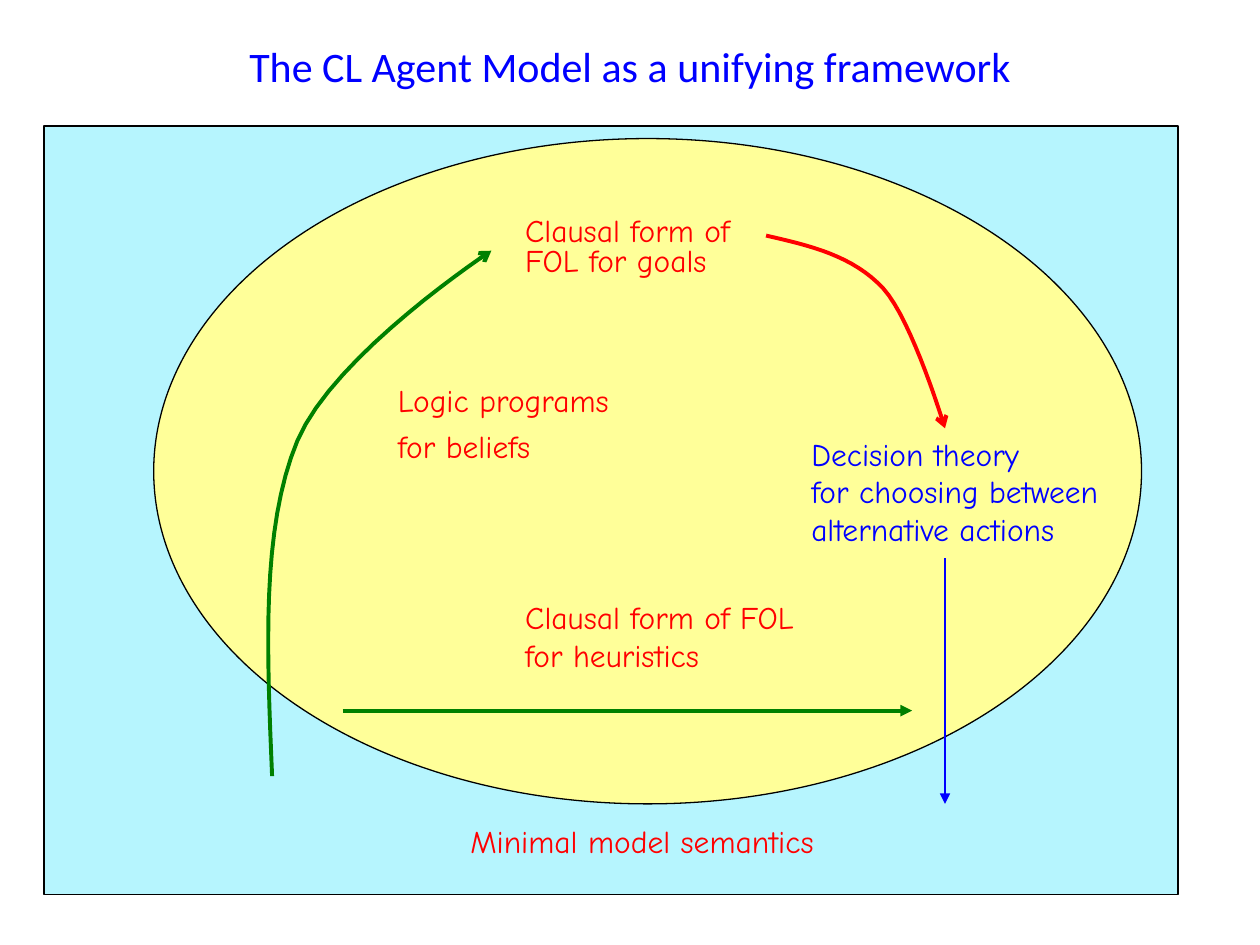
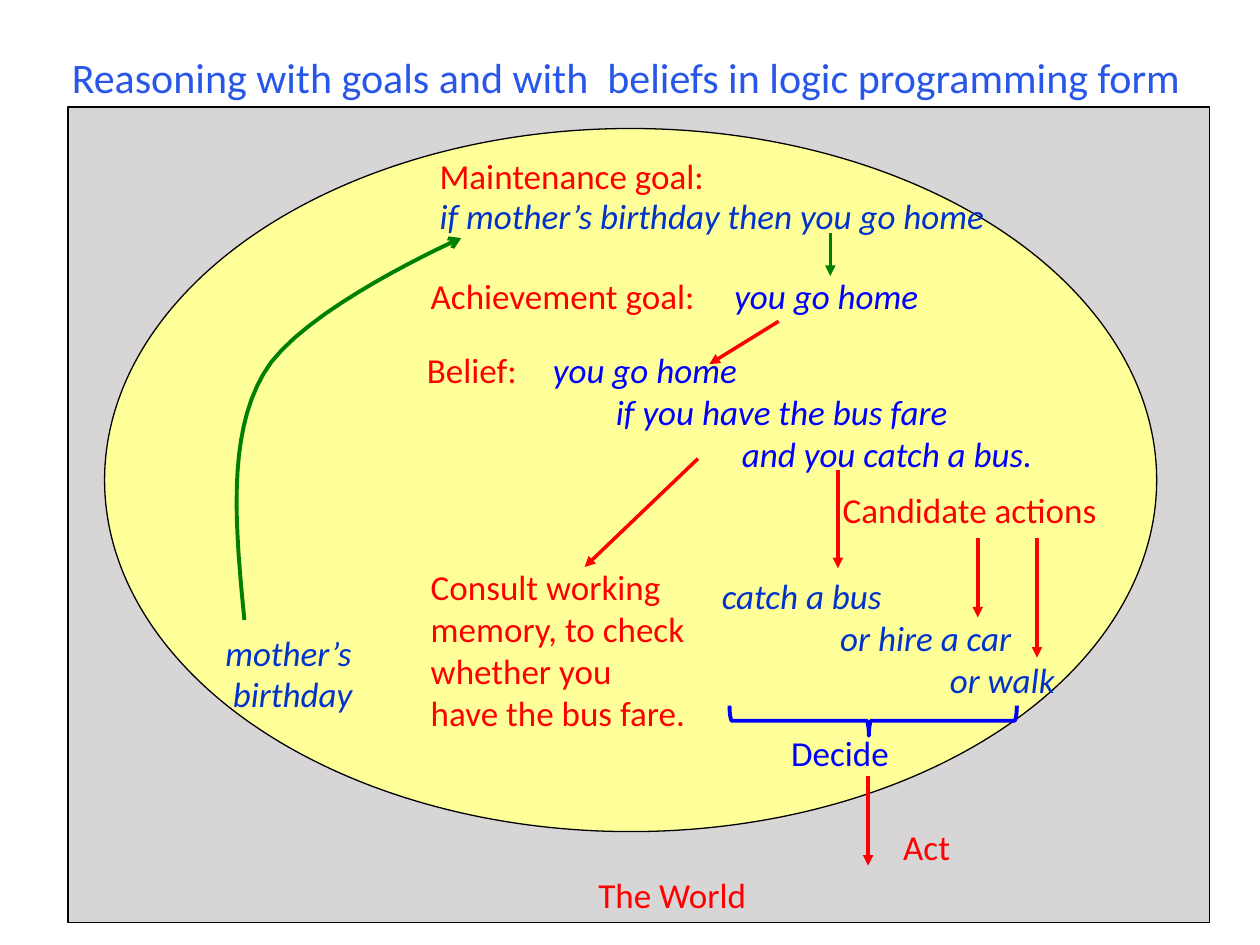
from dataclasses import dataclass

from lxml.etree import SubElement
from pptx import Presentation
from pptx.dml.color import RGBColor
from pptx.enum.shapes import MSO_CONNECTOR as Connector, MSO_SHAPE as Preset
from pptx.enum.text import MSO_ANCHOR as Anchor, PP_ALIGN as Align
from pptx.oxml.ns import qn
from pptx.util import Inches, Pt

RED, BLUE, GREEN = "FF0000", "0000FF", "008000"
ROYAL, TITLE_BLUE = "0033CC", "2856E8"
YELLOW, BLACK = "FFFF99", "000000"
HAND, SANS = "Comic Neue", "Calibri"
CURVE_STEPS = 16

Box = tuple[float, float, float, float]
Point = tuple[float, float]


@dataclass(frozen=True)
class Span:
    """A stretch of text in one colour."""
    text: str
    colour: str = RED
    italic: bool = False


@dataclass(frozen=True)
class Row:
    """A paragraph with its indent and tab stop in inches."""
    spans: tuple[Span, ...]
    indent: float = 0
    tab: float = 0


@dataclass(frozen=True)
class Label:
    """A block of rows, with tight line spacing where a gap is given."""
    at: Box
    rows: tuple[Row, ...]
    gap: float | None = None
    align: Align = Align.LEFT


@dataclass(frozen=True)
class Arrow:
    """A straight arrow."""
    start: Point
    end: Point
    colour: str = RED
    width: float = 2


@dataclass(frozen=True)
class Curve:
    """A curved arrow made of cubic Bezier pieces."""
    start: Point
    pieces: tuple[tuple[Point, Point, Point], ...]
    colour: str


@dataclass(frozen=True)
class Scene:
    """Everything that one slide shows."""
    title: str
    title_at: Box
    title_colour: str
    title_align: Align
    world: Box
    world_colour: str
    mind: Box
    font: str
    size: float
    labels: tuple[Label, ...]
    arrows: tuple[Arrow, ...]
    curves: tuple[Curve, ...]


def rgb(colour: str) -> RGBColor:
    """Turn a hex string into a colour."""
    return RGBColor.from_string(colour)


def inches(values) -> list:
    """Convert numbers to lengths."""
    return [Inches(value) for value in values]


def row(text: str, colour: str = RED, italic: bool = False, indent: float = 0) -> Row:
    """Make a row of a single span."""
    return Row((Span(text, colour, italic),), indent)


def style_line(shape, colour: str, width: float, head: str = "") -> None:
    """Set the outline and an optional arrowhead, and drop the shadow."""
    shape.line.color.rgb = rgb(colour)
    shape.line.width = Pt(width)
    properties = shape._element.spPr
    if head:
        SubElement(properties.find(qn("a:ln")), qn("a:tailEnd"), type=head)
    SubElement(properties, qn("a:effectLst"))


def add_region(slide, preset: Preset, at: Box, colour: str, opacity: int = 100) -> None:
    """Draw a filled, thinly outlined region."""
    region = slide.shapes.add_shape(preset, *inches(at))
    region.fill.solid()
    region.fill.fore_color.rgb = rgb(colour)
    if opacity < 100:
        tint = region._element.spPr.find(".//" + qn("a:srgbClr"))
        SubElement(tint, qn("a:alpha"), val=str(opacity * 1000))
    style_line(region, BLACK, 0.75)


def format_run(run, font: str, size: float, colour: str, italic: bool = False) -> None:
    """Set the font of a run."""
    run.font.name, run.font.size = font, Pt(size)
    run.font.color.rgb, run.font.italic = rgb(colour), italic


def add_title(slide, scene: Scene) -> None:
    """Place and format the title placeholder."""
    title = slide.shapes.title
    title.left, title.top, title.width, title.height = inches(scene.title_at)
    frame = title.text_frame
    frame.text = scene.title
    frame.vertical_anchor = Anchor.MIDDLE
    frame.paragraphs[0].alignment = scene.title_align
    format_run(frame.paragraphs[0].runs[0], SANS, 24, scene.title_colour)


def add_label(slide, label: Label, font: str, size: float) -> None:
    """Write the rows of a label."""
    frame = slide.shapes.add_textbox(*inches(label.at)).text_frame
    frame.word_wrap = True
    for number, line in enumerate(label.rows):
        paragraph = frame.add_paragraph() if number else frame.paragraphs[0]
        paragraph.alignment = label.align
        if label.gap is not None:
            paragraph.line_spacing = 0.8
            paragraph.space_before = Pt(label.gap * size)
        properties = paragraph._p.get_or_add_pPr()
        if line.indent:
            properties.set("marL", str(Inches(line.indent)))
            properties.set("indent", "0")
        if line.tab:
            stops = SubElement(properties, qn("a:tabLst"))
            SubElement(stops, qn("a:tab"), pos=str(Inches(line.tab)), algn="l")
        for span in line.spans:
            run = paragraph.add_run()
            run.text = span.text
            format_run(run, font, size, span.colour, span.italic)


def add_arrow(slide, arrow: Arrow) -> None:
    """Draw a straight arrow."""
    connector = slide.shapes.add_connector(
        Connector.STRAIGHT, *inches(arrow.start + arrow.end))
    style_line(connector, arrow.colour, arrow.width, "triangle")


def bezier(ends: tuple[Point, Point, Point, Point], t: float) -> Point:
    """Find the point at t on a cubic curve."""
    weights = ((1 - t) ** 3, 3 * t * (1 - t) ** 2, 3 * t ** 2 * (1 - t), t ** 3)
    x, y = (sum(w * p[axis] for w, p in zip(weights, ends)) for axis in (0, 1))
    return x, y


def add_curve(slide, curve: Curve) -> None:
    """Draw a curved arrow."""
    points, start = [], curve.start
    for piece in curve.pieces:
        points += [bezier((start, *piece), step / CURVE_STEPS)
                   for step in range(1, CURVE_STEPS + 1)]
        start = piece[-1]
    builder = slide.shapes.build_freeform(*inches(curve.start))
    builder.add_line_segments([inches(point) for point in points], close=False)
    outline = builder.convert_to_shape()
    outline.fill.background()
    style_line(outline, curve.colour, 2.25, "arrow")


def add_brace(slide, at: Box) -> None:
    """Draw the brace that gathers the candidate actions."""
    brace = slide.shapes.add_shape(Preset.LEFT_BRACE, *inches(at))
    brace.rotation = 270
    brace.adjustments[0], brace.adjustments[1] = 0.083, 0.485
    brace.fill.background()
    style_line(brace, BLUE, 2.25)


def add_scene(deck, scene: Scene):
    """Build one slide."""
    slide = deck.slides.add_slide(deck.slide_layouts[5])
    add_title(slide, scene)
    add_region(slide, Preset.RECTANGLE, scene.world, scene.world_colour, 44)
    add_region(slide, Preset.OVAL, scene.mind, YELLOW)
    for label in scene.labels:
        add_label(slide, label, scene.font, scene.size)
    for arrow in scene.arrows:
        add_arrow(slide, arrow)
    for curve in scene.curves:
        add_curve(slide, curve)
    return slide


FRAMEWORK = Scene(
    title="The CL Agent Model as a unifying framework",
    title_at=(0.5, 0, 9, 1.04), title_colour=BLUE, title_align=Align.CENTER,
    world=(0.35, 1, 9, 6.1), world_colour="59E9FD", mind=(1.22, 1.1, 7.84, 5.28),
    font=HAND, size=18,
    labels=(
        Label((6.34, 3.4, 2.72, 1.01), (
            row("Decision theory", BLUE),
            row("for choosing between", BLUE),
            row("alternative actions", BLUE))),
        Label((4.07, 1.68, 2.27, 0.59), (row("Clausal form of FOL for goals"),), 0.5),
        Label((3.45, 6.53, 3.29, 0.35), (row("Minimal model semantics"),), 0.2,
              Align.CENTER),
        Label((4.07, 4.7, 2.58, 0.71), (row("Clausal form of FOL for heuristics"),)),
        Label((3.06, 3.03, 2.02, 0.74),
              (row("Logic programs"), row("for beliefs")), 0.5),
    ),
    arrows=(
        Arrow((7.5, 4.43), (7.5, 6.38), BLUE, 1.5),
        Arrow((2.72, 5.64), (7.24, 5.64), GREEN, 2.25),
    ),
    curves=(
        Curve((6.08, 1.87), (
            ((6.43, 1.95), (6.77, 2.03), (7.01, 2.29)),
            ((7.24, 2.54), (7.5, 3.4), (7.5, 3.4))), RED),
        Curve((2.16, 6.16), (
            ((2.12, 5.18), (2.07, 4.2), (2.36, 3.5)),
            ((2.65, 2.81), (3.9, 1.99), (3.9, 1.99))), GREEN),
    ),
)

REASONING = Scene(
    title="Reasoning with goals and with  beliefs in logic programming form",
    title_at=(0.47, 0.36, 9.72, 0.5), title_colour=TITLE_BLUE, title_align=Align.LEFT,
    world=(0.54, 0.85, 9.06, 6.47), world_colour="A6A1A1", mind=(0.83, 1.02, 8.35, 5.58),
    font=SANS, size=20,
    labels=(
        Label((3.29, 2.72, 6.6, 1.11), (
            Row((Span("Belief:\t"), Span("you go home", BLUE, True)), tab=1),
            row("if you have the bus fare", BLUE, True, 1.5),
            row("and you catch a bus.", BLUE, True, 2.5))),
        Label((3.32, 2.19, 4.57, 0.38), (
            Row((Span("Achievement goal:\t"), Span("you go home", BLUE, True)),
                tab=2.41),), 0.2),
        Label((7.07, 6.57, 2.67, 0.38), (row("Act"),), 0.2),
        Label((4.44, 6.95, 1.79, 0.38), (row("The World"),), 0.2, Align.CENTER),
        Label((3.32, 4.44, 2.22, 1.78), (
            row("Consult working memory, to check whether you have the bus fare."),)),
        Label((5.63, 4.51, 4.05, 1.75), (
            row("catch a bus", ROYAL, True),
            row("or hire a car", ROYAL, True, 0.94),
            row("or walk", ROYAL, True, 1.81))),
        Label((6.18, 5.76, 2.48, 0.44), (row("Decide", BLUE),)),
        Label((6.59, 3.83, 2.34, 0.44), (row("Candidate actions"),)),
        Label((1.69, 5.03, 1.44, 0.71), (
            row("mother’s", ROYAL, True),
            row("birthday", ROYAL, True, 0.06)), 0.2),
        Label((3.39, 1.24, 4.8, 0.71), (
            row("Maintenance goal:"),
            row("if mother’s birthday then you go home", ROYAL, True)), 0.2),
    ),
    arrows=(
        Arrow((5.54, 3.64), (4.64, 4.5)),
        Arrow((6.18, 2.55), (5.63, 2.89)),
        Arrow((6.89, 6.16), (6.89, 6.87)),
        Arrow((7.76, 4.27), (7.76, 4.9)),
        Arrow((6.65, 3.73), (6.65, 4.51)),
        Arrow((8.23, 4.27), (8.23, 5.22)),
        Arrow((6.59, 1.85), (6.59, 2.19), GREEN),
    ),
    curves=(
        Curve((1.94, 4.92), (
            ((1.87, 4.2), (1.8, 3.47), (2.09, 2.97)),
            ((2.37, 2.46), (3.66, 1.89), (3.66, 1.89))), GREEN),
    ),
)


def main() -> None:
    """Build and save the deck."""
    deck = Presentation()
    deck.slide_width, deck.slide_height = Inches(10), Inches(7.5)
    add_scene(deck, FRAMEWORK)
    reasoning = add_scene(deck, REASONING)
    add_brace(reasoning, (6.81, 4.58, 0.24, 2.28))
    deck.save("out.pptx")


if __name__ == "__main__":
    main()
